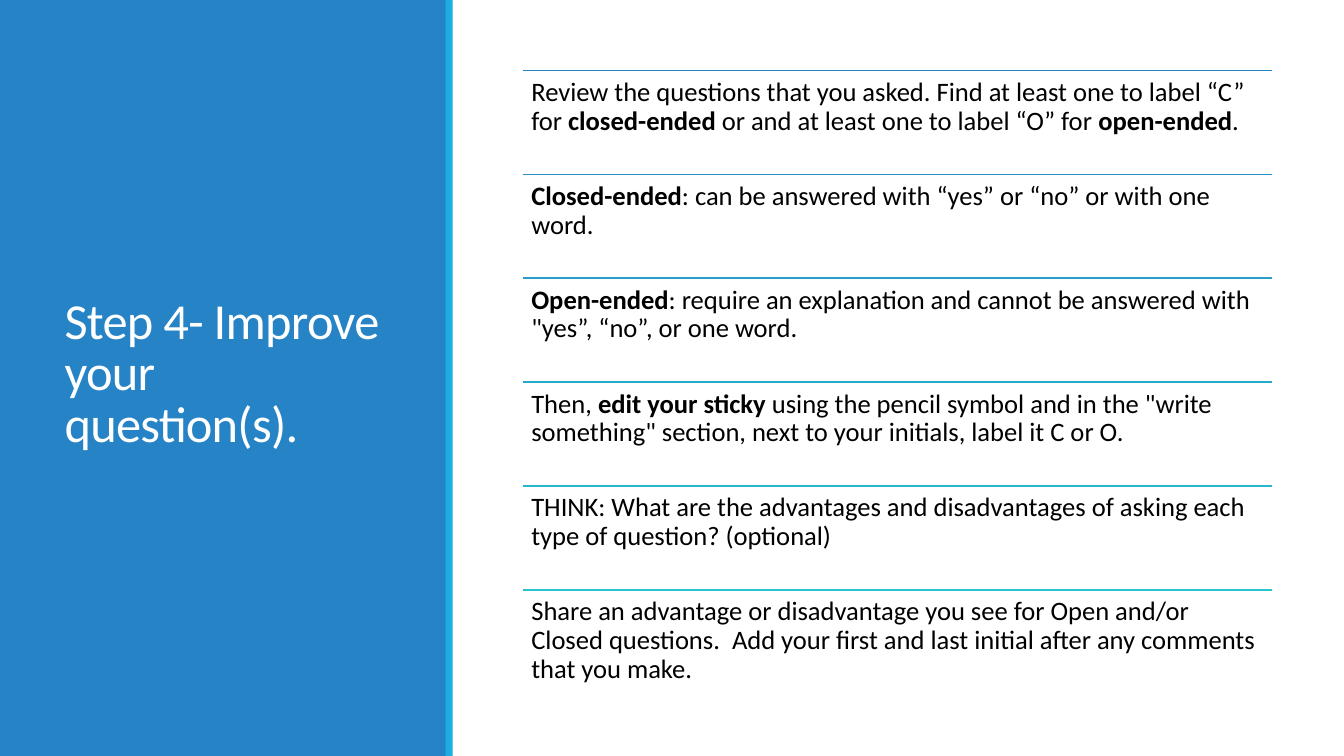
from dataclasses import dataclass

from lxml.etree import SubElement
from pptx import Presentation
from pptx.dml.color import RGBColor
from pptx.enum.shapes import MSO_CONNECTOR, MSO_SHAPE
from pptx.enum.text import MSO_ANCHOR, MSO_AUTO_SIZE, PP_ALIGN
from pptx.oxml.ns import qn
from pptx.util import Inches, Pt

TITLE = "Step 4- Improve your question(s)."

# Each step is a list of (text, bold) runs.
STEPS = [
    [("Review the questions that you asked. Find at least one to label “C” for ", False),
     ("closed-ended", True),
     (" or and at least one to label “O” for ", False),
     ("open-ended", True),
     (".", False)],
    [("Closed-ended", True),
     (": can be answered with “yes” or “no” or with one word.", False)],
    [("Open-ended", True),
     (": require an explanation and cannot be answered with \"yes”, “no”, or one word.", False)],
    [("Then, ", False),
     ("edit your sticky", True),
     (" using the pencil symbol and in the \"write something\" section, "
      "next to your initials, label it C or O.", False)],
    [("THINK: What are the advantages and disadvantages of asking each "
      "type of question? (optional)", False)],
    [("Share an advantage or disadvantage you see for Open and/or Closed questions.  "
      "Add your first and last initial after any comments that you make.", False)],
]


@dataclass(frozen=True)
class Theme:
    font: str = "Calibri"
    title_size: float = 36
    step_size: float = 19
    rule_width: float = 1.25
    background: tuple = (0xFF, 0xFF, 0xFF)
    title_text: tuple = (0xFF, 0xFF, 0xFF)
    step_text: tuple = (0, 0, 0)
    panel: tuple = (0x26, 0x83, 0xC6)
    stripe: tuple = (0x1C, 0xAD, 0xE4)
    first_rule: tuple = (0x26, 0x83, 0xC6)
    last_rule: tuple = (0x28, 0xC4, 0xCC)


THEME = Theme()

SLIDE_WIDTH, SLIDE_HEIGHT = 13.33, 7.5
PANEL_WIDTH, STRIPE_LEFT, STRIPE_WIDTH = 4.43, 4.42, 0.07
TITLE_BOX = (0.54, 0.57, 3.37, 6.31)
LIST_LEFT, LIST_TOP, LIST_WIDTH, LIST_HEIGHT = 5.19, 0.7, 7.43, 6.18
STEP_INSET = 0.08


def blend(start, end, share):
    return tuple(round(a + (b - a) * share) for a, b in zip(start, end))


def add_band(slide, left, width, color):
    """Add a full-height colour band."""
    shape = slide.shapes.add_shape(
        MSO_SHAPE.RECTANGLE, Inches(left), 0, Inches(width), Inches(SLIDE_HEIGHT))
    shape.shadow.inherit = False
    shape.fill.solid()
    shape.fill.fore_color.rgb = RGBColor(*color)
    shape.line.fill.background()


def add_run(paragraph, text, size, color, bold=False):
    run = paragraph.add_run()
    run.text = text
    run.font.name = THEME.font
    run.font.size = Pt(size)
    run.font.bold = bold
    run.font.color.rgb = RGBColor(*color)
    return run


def place_title(slide):
    title = slide.shapes.title
    title.left, title.top, title.width, title.height = map(Inches, TITLE_BOX)
    frame = title.text_frame
    frame.word_wrap = True
    frame.auto_size = MSO_AUTO_SIZE.NONE
    frame.vertical_anchor = MSO_ANCHOR.MIDDLE
    paragraph = frame.paragraphs[0]
    paragraph.alignment = PP_ALIGN.LEFT
    paragraph.line_spacing = 0.85
    run = add_run(paragraph, TITLE, THEME.title_size, THEME.title_text)
    run.font._element.set("spc", "-50")


def add_rule(slide, top, color):
    rule = slide.shapes.add_connector(
        MSO_CONNECTOR.STRAIGHT, Inches(LIST_LEFT), Inches(top),
        Inches(LIST_LEFT + LIST_WIDTH), Inches(top))
    rule.line.color.rgb = RGBColor(*color)
    rule.line.width = Pt(THEME.rule_width)
    SubElement(rule._element.spPr, qn("a:effectLst"))


def add_step(slide, top, height, runs):
    box = slide.shapes.add_textbox(
        Inches(LIST_LEFT), Inches(top), Inches(LIST_WIDTH), Inches(height))
    frame = box.text_frame
    frame.word_wrap = True
    frame.margin_left = frame.margin_right = Inches(STEP_INSET)
    frame.margin_top = frame.margin_bottom = Inches(STEP_INSET)
    paragraph = frame.paragraphs[0]
    paragraph.line_spacing = 0.9
    for text, bold in runs:
        add_run(paragraph, text, THEME.step_size, THEME.step_text, bold)


def main():
    presentation = Presentation()
    presentation.slide_width = Inches(SLIDE_WIDTH)
    presentation.slide_height = Inches(SLIDE_HEIGHT)
    slide = presentation.slides.add_slide(presentation.slide_layouts.get_by_name("Title Only"))
    slide.background.fill.solid()
    slide.background.fill.fore_color.rgb = RGBColor(*THEME.background)

    add_band(slide, 0, PANEL_WIDTH, THEME.panel)
    add_band(slide, STRIPE_LEFT, STRIPE_WIDTH, THEME.stripe)
    place_title(slide)
    # The title placeholder comes first in the tree, so lift it above the bands.
    slide.shapes._spTree.append(slide.shapes.title._element)

    row_height = LIST_HEIGHT / len(STEPS)
    for index, runs in enumerate(STEPS):
        top = LIST_TOP + index * row_height
        share = index / (len(STEPS) - 1)
        add_rule(slide, top, blend(THEME.first_rule, THEME.last_rule, share))
        add_step(slide, top, row_height, runs)

    presentation.save("out.pptx")


if __name__ == "__main__":
    main()
